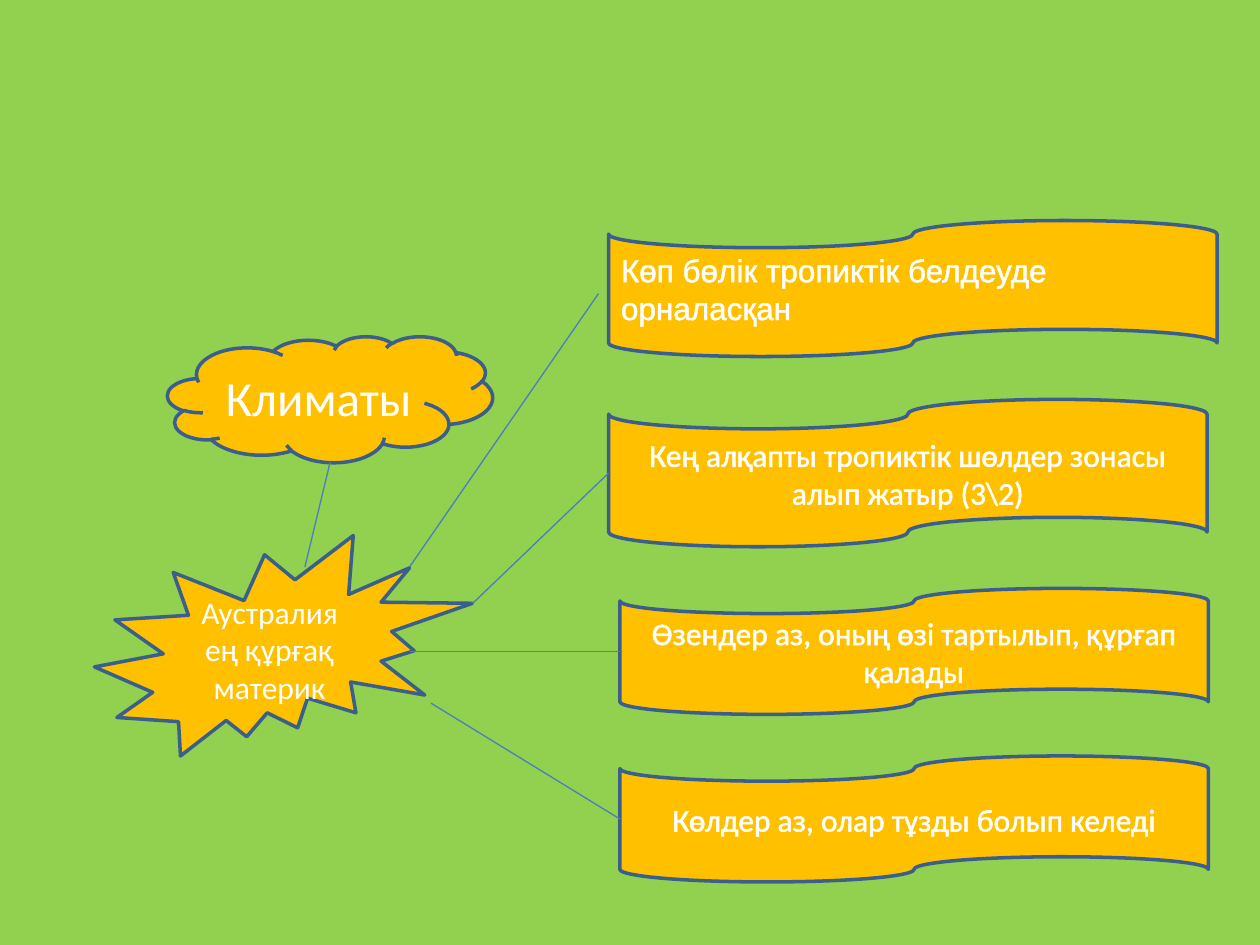
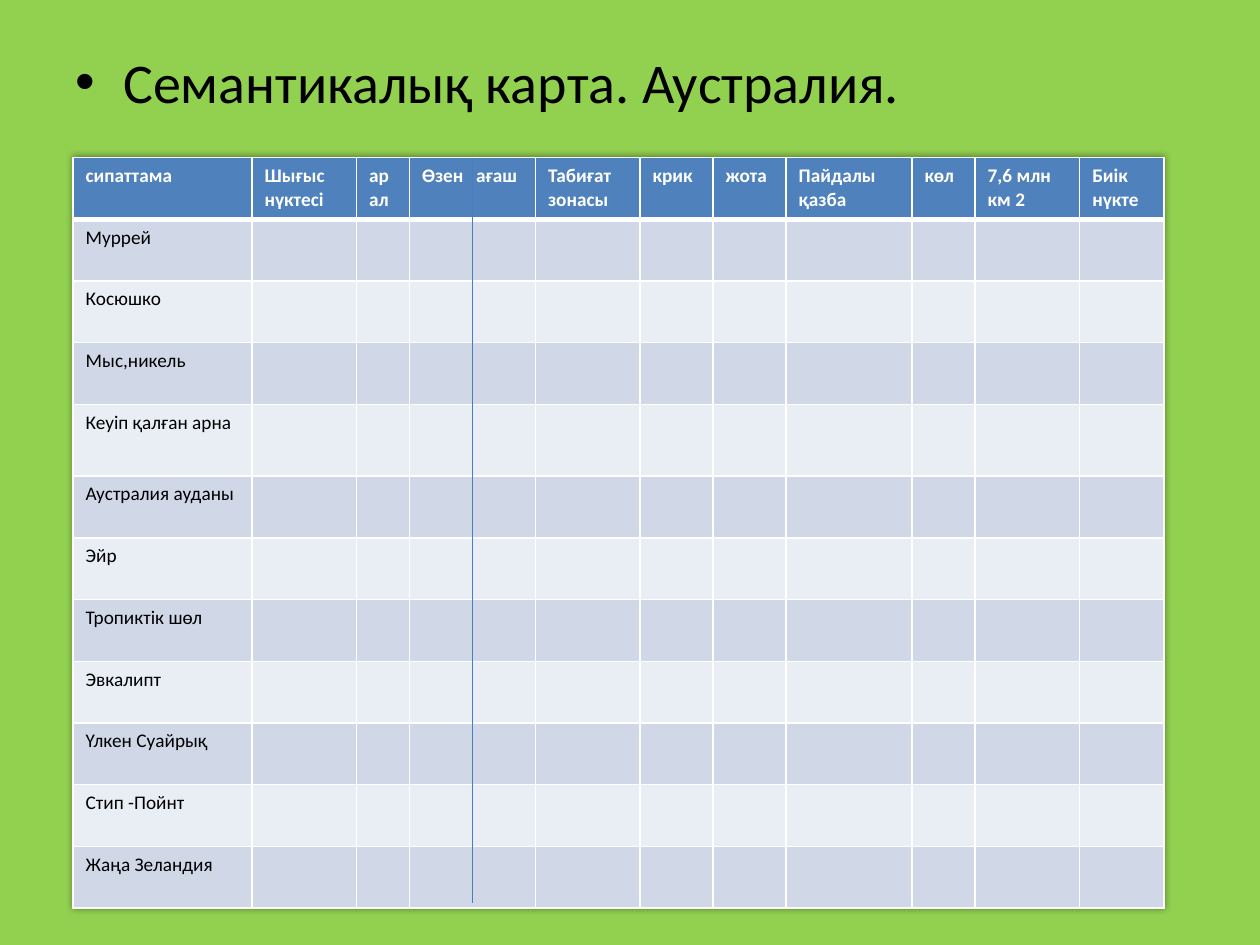
from lxml.etree import SubElement
from pptx import Presentation
from pptx.dml.color import RGBColor
from pptx.enum.shapes import MSO_CONNECTOR, MSO_SHAPE
from pptx.enum.text import MSO_ANCHOR, PP_ALIGN
from pptx.oxml import parse_xml
from pptx.oxml.ns import nsdecls, qn
from pptx.util import Inches, Pt

COLORS = {
    "background": "92D050",
    "figure": "FFC000",
    "outline": "3A5F8C",
    "connector": "4B7EBC",
    "header": "4F81BD",
    "odd": "D0D8E8",
    "even": "E9EDF4",
    "light": "FFFFFF",
    "dark": "000000",
}
LEFT_SIDE = 1


def rgb(name):
    return RGBColor.from_string(COLORS[name])


def line_xml(tag, width, color):
    return parse_xml(
        f'<a:{tag} {nsdecls("a")} w="{int(Pt(width))}"><a:solidFill>'
        f'<a:srgbClr val="{COLORS[color]}"/></a:solidFill></a:{tag}>'
    )


class Deck:
    def __init__(self):
        self.prs = Presentation()
        self.prs.slide_width, self.prs.slide_height = Inches(10), Inches(7.5)
        fill = self.prs.slide_master.background.fill
        fill.solid()
        fill.fore_color.rgb = rgb("background")
        self.slide = None

    def new_slide(self, layout):
        layouts = self.prs.slide_layouts
        self.slide = self.prs.slides.add_slide(layouts.get_by_name(layout))

    def set_text(self, frame, text, color, align=PP_ALIGN.LEFT, **font):
        style = {"name": "Calibri", "size": Pt(18), "bold": False} | font
        frame.text = text
        for paragraph in frame.paragraphs:
            paragraph.alignment = align
            for run in paragraph.runs:
                for key, value in style.items():
                    setattr(run.font, key, value)
                run.font.color.rgb = rgb(color)

    def title(self, text, box):
        heading = self.slide.shapes.title
        for key, value in zip(("left", "top", "width", "height"), box):
            setattr(heading, key, Inches(value))
        frame = heading.text_frame
        frame.vertical_anchor = MSO_ANCHOR.TOP
        self.set_text(frame, text, "dark", size=Pt(32))
        props = frame.paragraphs[0]._p.get_or_add_pPr()
        props.set("marL", str(Inches(0.38)))
        props.set("indent", str(-Inches(0.38)))
        SubElement(props, qn("a:buFont"), typeface="Arial")
        SubElement(props, qn("a:buChar"), char="•")

    def figure(self, preset, box, text, align=PP_ALIGN.CENTER, outlined=False, **font):
        shape = self.slide.shapes.add_shape(preset, *map(Inches, box))
        shape.shadow.inherit = False
        shape.fill.solid()
        shape.fill.fore_color.rgb = rgb("figure")
        shape.line.color.rgb = rgb("outline")
        shape.line.width = Pt(2)
        shape.text_frame.vertical_anchor = MSO_ANCHOR.MIDDLE
        self.set_text(shape.text_frame, text, "light", align, **font)
        if outlined:
            for run in shape.text_frame.paragraphs[0].runs:
                run._r.get_or_add_rPr().insert(0, line_xml("ln", 1.45, "light"))
        return shape

    def connector(self, start, end, target=None):
        link = self.slide.shapes.add_connector(
            MSO_CONNECTOR.STRAIGHT, *map(Inches, (*start, *end))
        )
        link.line.color.rgb = rgb("connector")
        link.line.width = Pt(0.75)
        SubElement(link._element.spPr, qn("a:effectLst"))
        if target is not None:
            link.end_connect(target, LEFT_SIDE)

    def cell(self, cell, text, fill, color, bold, bottom):
        self.set_text(cell.text_frame, text, color, size=Pt(11), bold=bold)
        cell.fill.solid()
        cell.fill.fore_color.rgb = rgb(fill)
        props = cell._tc.get_or_add_tcPr()
        widths = {"lnL": 1, "lnR": 1, "lnT": 1, "lnB": bottom}
        for position, (side, width) in enumerate(widths.items()):
            props.insert(position, line_xml(side, width, "light"))

    def table(self, box, headers, labels, widths, heights):
        grid = self.slide.shapes.add_table(
            len(heights), len(widths), *map(Inches, box)
        ).table
        for column, width in zip(grid.columns, widths):
            column.width = Inches(width)
        for row, height in zip(grid.rows, heights):
            row.height = Inches(height)
        for column, header in enumerate(headers):
            bottom = 3
            self.cell(grid.cell(0, column), header, "header", "light", True, bottom)
        for row, label in enumerate(labels, 1):
            band = "odd" if row % 2 else "even"
            for column in range(len(widths)):
                text = "" if column else label
                self.cell(grid.cell(row, column), text, band, "dark", False, 1)
        grid._tbl.tblPr.insert(0, parse_xml(
            f'<a:effectLst {nsdecls("a")}><a:outerShdw blurRad="50800" dist="0">'
            f'<a:srgbClr val="{COLORS["dark"]}"><a:alpha val="40000"/></a:srgbClr>'
            '</a:outerShdw></a:effectLst>'
        ))
        return grid


def climate_slide(deck):
    deck.new_slide("Blank")
    deck.figure(MSO_SHAPE.CLOUD, (1.33, 2.67, 2.58, 1), "Климаты", size=Pt(28))
    deck.figure(MSO_SHAPE.EXPLOSION2, (0.75, 4.25, 3, 1.75),
                "Аустралия\nең құрғақ\nматерик")
    deck.connector((2.62, 3.67), (2.42, 4.5))

    facts = [
        ("Көп бөлік тропиктік белдеуде орналасқан", (4.83, 1.75, 4.83, 1.08),
         {"name": "Arial", "align": PP_ALIGN.LEFT}),
        ("Кең алқапты тропиктік шөлдер зонасы алып жатыр (3\\2)",
         (4.83, 3.17, 4.75, 1.17), {}),
        ("Өзендер аз, оның өзі тартылып, құрғап қалады", (4.92, 4.67, 4.67, 1), {}),
        ("Көлдер аз, олар тұзды болып келеді", (4.92, 6, 4.67, 1), {}),
    ]
    _, deserts, rivers, lakes = [
        deck.figure(MSO_SHAPE.FLOWCHART_PUNCHED_TAPE, box, text, outlined=True, **style)
        for text, box, style in facts
    ]
    deck.connector((3.25, 4.5), (4.75, 2.33))
    deck.connector((3.75, 4.79), (4.83, 3.75), deserts)
    deck.connector((3.25, 5.17), (4.92, 5.17), rivers)
    deck.connector((3.42, 5.58), (4.92, 6.5), lakes)


def semantic_map_slide(deck):
    deck.new_slide("Title Only")
    deck.title("Семантикалық карта. Аустралия.", (0.5, 0.33, 9, 0.8))
    river_and_tree = "Өзен\tағаш"
    headers = [
        "сипаттама", "Шығыс нүктесі", "арал", river_and_tree, "Табиғат зонасы",
        "крик", "жота", "Пайдалы\nқазба", "көл", "7,6 млн км 2", "Биік нүкте",
    ]
    labels = [
        "Муррей", "Косюшко", "Мыс,никель", "Кеуіп қалған арна",
        "Аустралия ауданы", "Эйр", "Тропиктік шөл", "Эвкалипт",
        "Үлкен Суайрық", "Стип -Пойнт", "Жаңа Зеландия",
    ]
    widths = [1.42, 0.83, 0.42, 1, 0.83, 0.58, 0.58, 1, 0.5, 0.83, 0.67]
    heights = [0.57 if row == 4 else 0.49 for row in range(len(labels) + 1)]
    grid = deck.table((0.58, 1.25, 8.67, 5.92), headers, labels, widths, heights)

    shared_header = grid.cell(0, headers.index(river_and_tree))
    props = shared_header.text_frame.paragraphs[0]._p.get_or_add_pPr()
    tabs = SubElement(props, qn("a:tabLst"))
    SubElement(tabs, qn("a:tab"), pos=str(Inches(0.43)), algn="l")
    deck.connector((3.75, 1.25), (3.75, 7.17))


def main():
    deck = Deck()
    climate_slide(deck)
    semantic_map_slide(deck)
    deck.prs.save("out.pptx")


if __name__ == "__main__":
    main()
